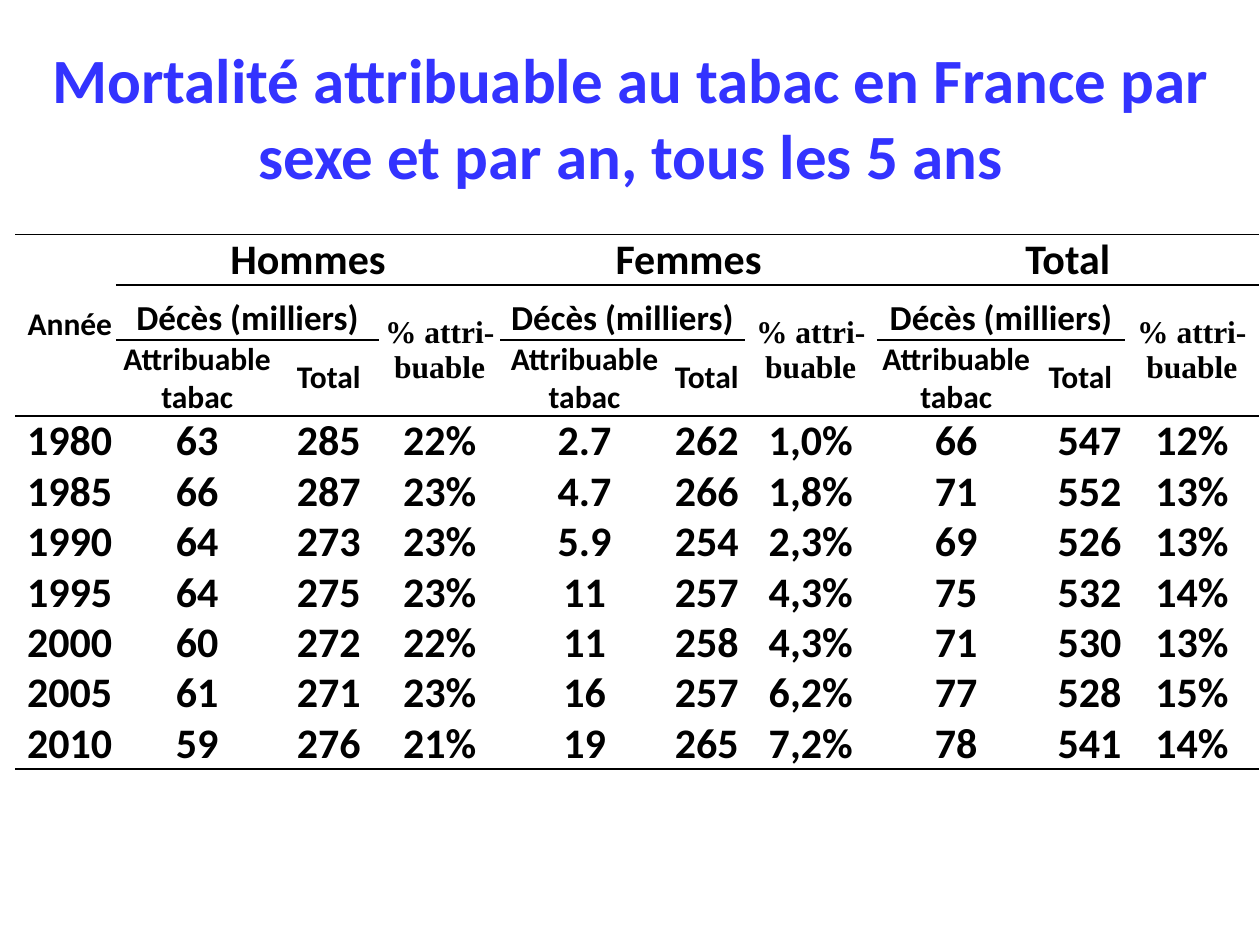
from pptx import Presentation
from pptx.dml.color import RGBColor
from pptx.enum.text import MSO_ANCHOR, PP_ALIGN
from pptx.oxml import parse_xml
from pptx.oxml.ns import nsdecls
from pptx.util import Inches, Pt

BLUE = RGBColor(0x33, 0x33, 0xFF)
BLACK = RGBColor(0, 0, 0)
PLAIN = "{2D5ABB26-0587-4C30-8999-92F81FD0307C}"  # no style, no grid

TITLE = "Mortalité attribuable au tabac en France par sexe et par an, tous les 5 ans"
GROUPS = ["Hommes", "Femmes", "Total"]
WIDTHS = [0.8, 1.29, 0.8, 0.96, 1.34, 0.6, 1.05, 1.26, 0.71, 1.06]
HEIGHTS = [0.11, 0.44, 0.39] + [0.32] * 7
HEAD = 3
RIGHT = (0, 8)  # columns whose figures are set to the right
DATA = [
    ["1980", "63", "285", "22%", "2.7", "262", "1,0%", "66", "547", "12%"],
    ["1985", "66", "287", "23%", "4.7", "266", "1,8%", "71", "552", "13%"],
    ["1990", "64", "273", "23%", "5.9", "254", "2,3%", "69", "526", "13%"],
    ["1995", "64", "275", "23%", "11", "257", "4,3%", "75", "532", "14%"],
    ["2000", "60", "272", "22%", "11", "258", "4,3%", "71", "530", "13%"],
    ["2005", "61", "271", "23%", "16", "257", "6,2%", "77", "528", "15%"],
    ["2010", "59", "276", "21%", "19", "265", "7,2%", "78", "541", "14%"],
]


def write(frame, text, size, color=BLACK, align=PP_ALIGN.CENTER, face="Calibri"):
    par = frame.paragraphs[0]
    par.text = text
    par.alignment = align
    font = par.font
    font.name, font.size, font.bold = face, Pt(size), True
    font.color.rgb = color


def add_title(slide):
    box = slide.shapes.add_textbox(Inches(0.2), Inches(0.3), Inches(9.61), Inches(1.25))
    frame = box.text_frame
    frame.word_wrap = True
    frame.vertical_anchor = MSO_ANCHOR.MIDDLE
    write(frame, TITLE, 36, BLUE)


def rule(cell, sides):
    """Draw the named sides (T, B) in black and leave the others bare."""
    props = cell._tc.get_or_add_tcPr()
    for spot, side in enumerate("LRTB"):
        paint = '<a:solidFill><a:srgbClr val="000000"/></a:solidFill>'
        if side not in sides:
            paint = "<a:noFill/>"
        edge = f'<a:ln{side} w="12700" {nsdecls("a")}>{paint}</a:ln{side}>'
        props.insert(spot, parse_xml(edge))


def fill_cell(cell, text, size, sides, anchor=MSO_ANCHOR.MIDDLE, **style):
    cell.margin_left = cell.margin_right = Inches(0.03)
    cell.margin_top = cell.margin_bottom = 0
    cell.vertical_anchor = anchor
    cell.fill.background()
    write(cell.text_frame, text, size, **style)
    rule(cell, sides)


def fill_head(table):
    def head(row, col, text, size, rows=1, cols=1, **style):
        cell = table.cell(row, col)
        if rows * cols > 1:
            cell.merge(table.cell(row + rows - 1, col + cols - 1))
        fill_cell(cell, text, size, "TB", **style)

    low = MSO_ANCHOR.BOTTOM
    head(0, 0, "Année", 18, rows=HEAD, align=PP_ALIGN.RIGHT)
    for index, name in enumerate(GROUPS):
        col = 1 + 3 * index
        head(0, col, name, 24, cols=3)
        head(1, col, "Décès (milliers)", 20, cols=2, anchor=low)
        head(1, col + 2, "% attri-buable", 18, rows=2, face="Times New Roman")
        head(2, col, "Attribuable tabac", 18, anchor=low)
        head(2, col + 1, "Total", 18)


def fill_body(table):
    ends = {0: "T", len(DATA) - 1: "B"}
    for row, line in enumerate(DATA):
        for col, text in enumerate(line):
            align = PP_ALIGN.RIGHT if col in RIGHT else PP_ALIGN.CENTER
            anchor = MSO_ANCHOR.BOTTOM if col < 2 else MSO_ANCHOR.MIDDLE
            cell = table.cell(HEAD + row, col)
            fill_cell(cell, text, 24, ends.get(row, ""), anchor, align=align)


def add_table(slide):
    table = slide.shapes.add_table(
        len(HEIGHTS), len(WIDTHS), Inches(0.12), Inches(1.86), Inches(9.88), Inches(4.24)
    ).table
    table.first_row = table.horz_banding = False
    table._tbl.tblPr[0].text = PLAIN
    for column, width in zip(table.columns, WIDTHS):
        column.width = Inches(width)
    for row, height in zip(table.rows, HEIGHTS):
        row.height = Inches(height)
    # Unused cells keep a small font so that they do not stretch the rows.
    fill_head(table)
    for cell in table.iter_cells():
        if cell.is_spanned:
            cell.margin_top = cell.margin_bottom = 0
            cell.text_frame.paragraphs[0].font.size = Pt(8)
    fill_body(table)


def main():
    deck = Presentation()
    deck.slide_width, deck.slide_height = Inches(10), Inches(7.5)
    slide = deck.slides.add_slide(deck.slide_layouts[6])
    add_title(slide)
    add_table(slide)
    deck.save("out.pptx")


if __name__ == "__main__":
    main()
